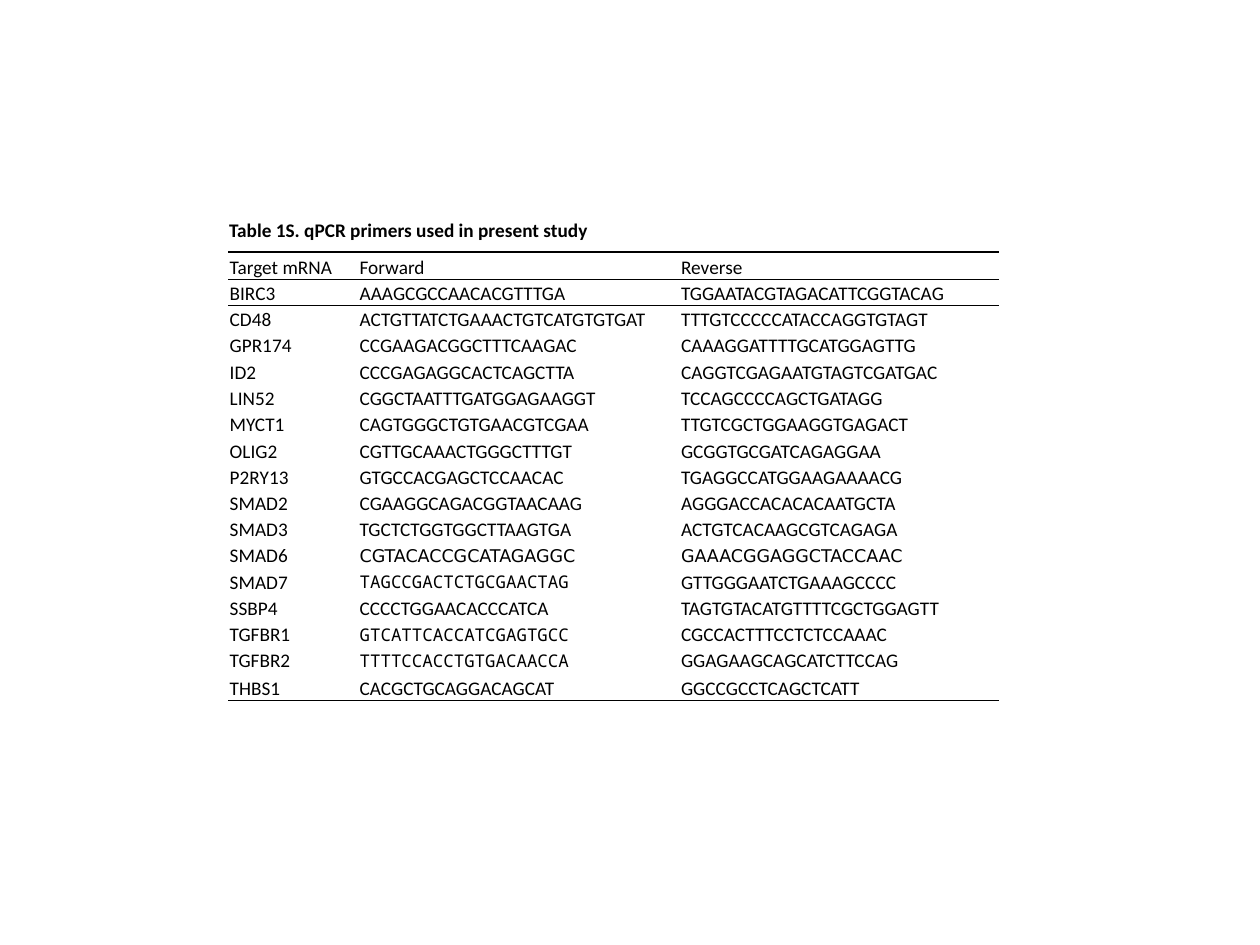
from lxml import etree
from pptx import Presentation
from pptx.dml.color import RGBColor
from pptx.enum.text import MSO_ANCHOR, MSO_AUTO_SIZE
from pptx.oxml.ns import qn
from pptx.util import Cm, Pt

BOTTOM, MIDDLE = MSO_ANCHOR.BOTTOM, MSO_ANCHOR.MIDDLE
GROW = MSO_AUTO_SIZE.SHAPE_TO_FIT_TEXT

COLORS = {"text": "000000", "rule": "000000"}
BODY = {"name": "Calibri", "size": Pt(11)}
TITLE = {**BODY, "bold": True}
SANS = {"name": "DejaVu Sans", "size": Pt(10)}
MONO = {"name": "Noto Sans Mono", "size": Pt(10)}

NO_STYLE = "{2D5ABB26-0587-4C30-8999-92F81FD0307C}"
COL_WIDTHS = [2.62, 6.48, 6.43]
ROW_HEIGHT = 0.53
SPECIAL_HEIGHTS = {"Target mRNA": 0.55, "SMAD6": 0.5, "SMAD7": 0.55, "THBS1": 0.55}
TOP_SPACER, BOTTOM_SPACER = 0.51, 0.23
CELL_MARGINS = {
    "margin_left": Cm(0.03), "margin_right": Cm(0.03),
    "margin_top": Cm(0.03), "margin_bottom": 0,
}

PRIMERS = [
    ("Target mRNA", "Forward", "Reverse"),
    ("BIRC3", "AAAGCGCCAACACGTTTGA", "TGGAATACGTAGACATTCGGTACAG"),
    ("CD48", "ACTGTTATCTGAAACTGTCATGTGTGAT", "TTTGTCCCCCATACCAGGTGTAGT"),
    ("GPR174", "CCGAAGACGGCTTTCAAGAC", "CAAAGGATTTTGCATGGAGTTG"),
    ("ID2", "CCCGAGAGGCACTCAGCTTA", "CAGGTCGAGAATGTAGTCGATGAC"),
    ("LIN52", "CGGCTAATTTGATGGAGAAGGT", "TCCAGCCCCAGCTGATAGG"),
    ("MYCT1", "CAGTGGGCTGTGAACGTCGAA", "TTGTCGCTGGAAGGTGAGACT"),
    ("OLIG2", "CGTTGCAAACTGGGCTTTGT", "GCGGTGCGATCAGAGGAA"),
    ("P2RY13", "GTGCCACGAGCTCCAACAC", "TGAGGCCATGGAAGAAAACG"),
    ("SMAD2", "CGAAGGCAGACGGTAACAAG", "AGGGACCACACACAATGCTA"),
    ("SMAD3", "TGCTCTGGTGGCTTAAGTGA", "ACTGTCACAAGCGTCAGAGA"),
    ("SMAD6", "CGTACACCGCATAGAGGC", "GAAACGGAGGCTACCAAC"),
    ("SMAD7", "TAGCCGACTCTGCGAACTAG", "GTTGGGAATCTGAAAGCCCC"),
    ("SSBP4", "CCCCTGGAACACCCATCA", "TAGTGTACATGTTTTCGCTGGAGTT"),
    ("TGFBR1", "GTCATTCACCATCGAGTGCC", "CGCCACTTTCCTCTCCAAAC"),
    ("TGFBR2", "TTTTCCACCTGTGACAACCA", "GGAGAAGCAGCATCTTCCAG"),
    ("THBS1", "CACGCTGCAGGACAGCAT", "GGCCGCCTCAGCTCATT"),
]
MONO_FORWARD = {"SMAD7", "TGFBR1", "TGFBR2"}


def write(p, text, font):
    r = p.add_run()
    r.text = text
    for name, value in font.items():
        setattr(r.font, name, value)
    r.font.color.rgb = RGBColor.from_string(COLORS["text"])


def add_title(s, text):
    sp = s.shapes.add_textbox(Cm(4.37), Cm(4.27), Cm(9.73), Cm(0.74))
    tf = sp.text_frame
    tf.word_wrap = True
    tf.auto_size = GROW
    write(tf.paragraphs[0], text, TITLE)


def add_borders(cell, sides):
    """Draw black rules on the given sides, listed in schema order (T, B)."""
    tcPr = cell._tc.get_or_add_tcPr()
    for i, side in enumerate(sides):
        ln = etree.Element(qn(f"a:ln{side}"), w=str(Pt(1)))
        fill = etree.SubElement(ln, qn("a:solidFill"))
        etree.SubElement(fill, qn("a:srgbClr"), val=COLORS["rule"])
        tcPr.insert(i, ln)


def fill_cell(cell, text, font, anchor):
    cell.fill.background()
    cell.vertical_anchor = anchor
    for name, value in CELL_MARGINS.items():
        setattr(cell, name, value)
    p = cell.text_frame.paragraphs[0]
    if text:
        write(p, text, font)
    else:
        etree.SubElement(p._p, qn("a:endParaRPr"), sz="400")


def cell_format(gene, col):
    """Return the font and anchor of one cell."""
    if gene == "SMAD6" and col > 0:
        return SANS, BOTTOM
    if gene in MONO_FORWARD and col == 1:
        return MONO, MIDDLE
    return BODY, BOTTOM


def add_primer_table(s):
    blank = ("",) * len(COL_WIDTHS)
    rows = [blank, *PRIMERS, blank]
    heights = [SPECIAL_HEIGHTS.get(row[0], ROW_HEIGHT) for row in rows]
    heights[0], heights[-1] = TOP_SPACER, BOTTOM_SPACER
    last = len(rows) - 1
    ruled_below = {0, 1, last - 1}

    frame = s.shapes.add_table(len(rows), len(COL_WIDTHS), Cm(4.6), Cm(4.57),
                               Cm(sum(COL_WIDTHS)), Cm(sum(heights)))
    table = frame.table
    table.first_row = table.horz_banding = False
    table._tbl.tblPr.find(qn("a:tableStyleId")).text = NO_STYLE
    for column, width in zip(table.columns, COL_WIDTHS):
        column.width = Cm(width)
    for i, (row, height) in enumerate(zip(rows, heights)):
        table.rows[i].height = Cm(height)
        sides = ["T"] * (i - 1 in ruled_below) + ["B"] * (i in ruled_below)
        for j, text in enumerate(row):
            cell = table.cell(i, j)
            fill_cell(cell, text, *cell_format(row[0], j))
            add_borders(cell, sides)


def main():
    prs = Presentation()
    prs.slide_width, prs.slide_height = Cm(25.4), Cm(19.05)
    s = prs.slides.add_slide(prs.slide_layouts[6])
    add_title(s, "Table 1S. qPCR primers used in present study")
    add_primer_table(s)
    prs.save("out.pptx")


if __name__ == "__main__":
    main()
